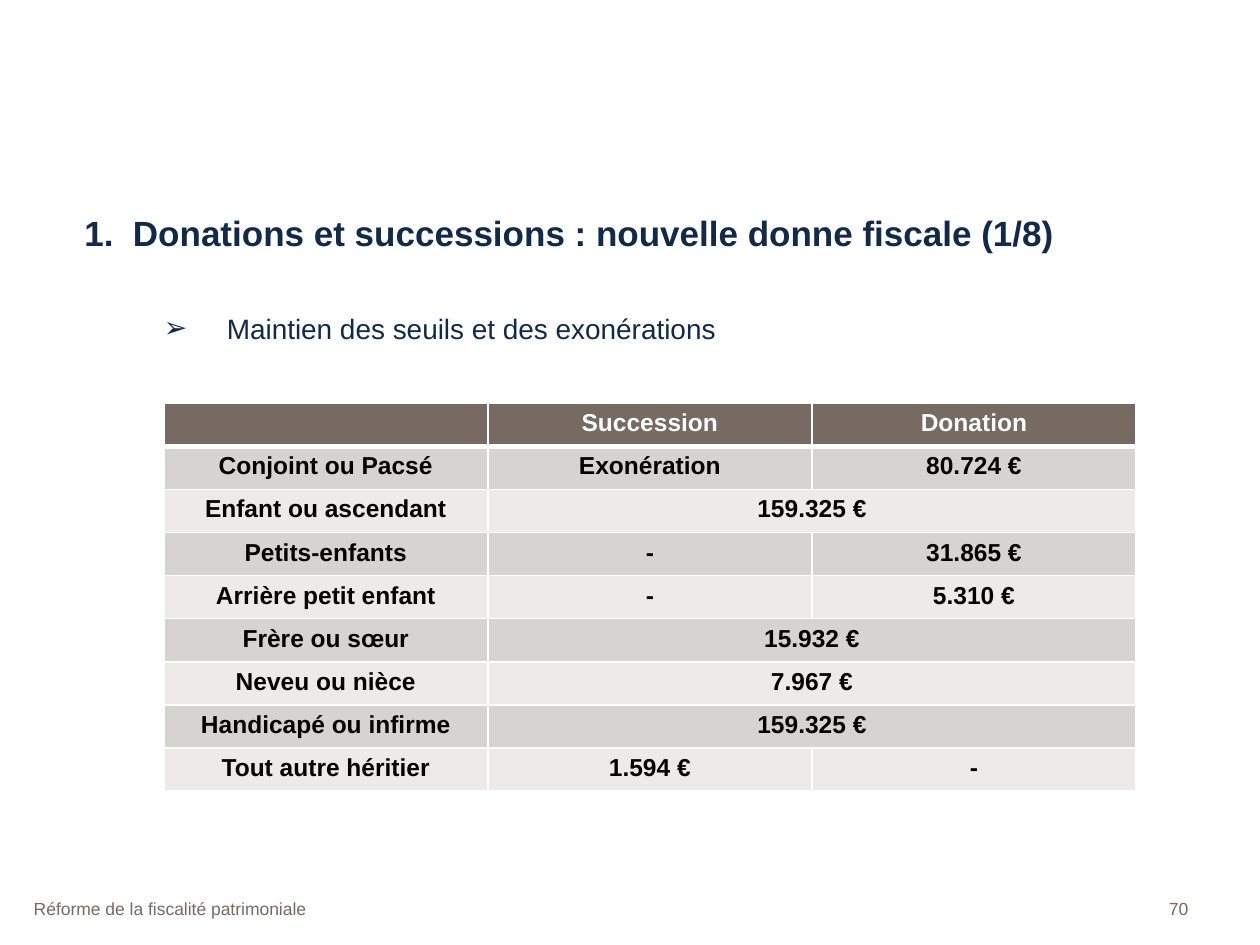
from dataclasses import dataclass
from typing import NamedTuple

from lxml.etree import SubElement
from pptx import Presentation
from pptx.dml.color import RGBColor
from pptx.enum.text import MSO_ANCHOR as Anchor, MSO_AUTO_SIZE as AutoSize, PP_ALIGN as Align
from pptx.oxml import parse_xml
from pptx.oxml.ns import nsdecls, qn
from pptx.util import Pt


@dataclass(frozen=True)
class Theme:
    """Font, colours and type sizes of the slide."""
    font: str = "Arial"
    navy: str = "13294A"
    taupe: str = "766A62"
    white: str = "FFFFFF"
    black: str = "000000"
    bands: tuple[str, str] = ("D6D4D3", "ECEBEA")
    title: int = 20
    body: int = 16
    table: int = 14
    footer: int = 10


class Box(NamedTuple):
    """Place and size in points."""
    left: float
    top: float
    width: float
    height: float


class Row(NamedTuple):
    """Heir and allowances; without a donation value the succession cell spans both."""
    heir: str
    succession: str
    donation: str | None = None


T = Theme()
TITLE = Box(41, 116, 645, 33.8)
BODY = Box(41, 159, 645, 323.3)
NUMBER = Box(641.5, 509.8, 44.6, 30.2)
FOOTER = Box(12.2, 509.8, 610.6, 30.2)
TABLE = Box(93.6, 230.4, 555.6, 221.76)
ROWS = [
    Row("", "Succession", "Donation"),
    Row("Conjoint ou Pacsé", "Exonération", "80.724 €"),
    Row("Enfant ou ascendant", "159.325 €"),
    Row("Petits-enfants", "-", "31.865 €"),
    Row("Arrière petit enfant", "-", "5.310 €"),
    Row("Frère ou sœur", "15.932 €"),
    Row("Neveu ou nièce", "7.967 €"),
    Row("Handicapé ou infirme", "159.325 €"),
    Row("Tout autre héritier", "1.594 €", "-"),
]


def write(tf, text: str, *, size: int, color: str, bold: bool = False,
          align: Align = Align.LEFT):
    """Write one formatted paragraph and return it."""
    p = tf.paragraphs[0]
    p.alignment = align
    if text:
        r = p.add_run()
        r.text = text
        r.font.name, r.font.size, r.font.bold = T.font, Pt(size), bold
        r.font.color.rgb = RGBColor.from_string(color)
    else:
        SubElement(p._p, qn("a:endParaRPr"), sz=str(size * 100))
    return p


def place(sp, box: Box, anchor: Anchor = Anchor.TOP):
    """Move a text shape to its box and return its text frame."""
    sp.left, sp.top, sp.width, sp.height = map(Pt, box)
    tf = sp.text_frame
    tf.word_wrap, tf.auto_size, tf.vertical_anchor = True, AutoSize.NONE, anchor
    return tf


def add_label(s, box: Box, text: str, align: Align = Align.LEFT) -> None:
    """Add a footer text box."""
    tf = place(s.shapes.add_textbox(*map(Pt, box)), box)
    write(tf, text, size=T.footer, color=T.taupe, align=align)


def add_bullet(p, char: str, margin: float, indent: float) -> None:
    """Give a paragraph a hanging bullet."""
    pPr = p._p.get_or_add_pPr()
    pPr.set("marL", str(Pt(margin)))
    pPr.set("indent", str(Pt(indent)))
    SubElement(pPr, qn("a:buFont"), typeface=T.font)
    SubElement(pPr, qn("a:buChar"), char=char)


def set_borders(cell, bottom: float) -> None:
    """Draw white borders around a cell."""
    tcPr = cell._tc.get_or_add_tcPr()
    for i, (side, width) in enumerate({"L": 1, "R": 1, "T": 1, "B": bottom}.items()):
        tcPr.insert(i, parse_xml(
            f'<a:ln{side} {nsdecls("a")} w="{Pt(width)}"><a:solidFill>'
            f'<a:srgbClr val="{T.white}"/></a:solidFill></a:ln{side}>'))


def add_allowances(s) -> None:
    """Add the table of allowances."""
    table = s.shapes.add_table(len(ROWS), 3, *map(Pt, TABLE)).table
    for col in table.columns:
        col.width = Pt(TABLE.width / 3)
    for i, row in enumerate(ROWS):
        header = i == 0
        table.rows[i].height = Pt(TABLE.height / len(ROWS))
        for j, text in enumerate(row):
            cell = table.cell(i, j)
            write(cell.text_frame, text or "", size=T.table, bold=True,
                  color=T.white if header else T.black, align=Align.CENTER)
            cell.fill.solid()
            cell.fill.fore_color.rgb = RGBColor.from_string(
                T.taupe if header else T.bands[(i - 1) % 2])
            set_borders(cell, bottom=3 if header else 1)
        if row.donation is None:
            table.cell(i, 1).merge(table.cell(i, 2))


def main() -> None:
    """Build and save the slide."""
    prs = Presentation()
    prs.slide_width, prs.slide_height = Pt(720), Pt(540)
    s = prs.slides.add_slide(prs.slide_layouts[1])
    write(place(s.shapes.title, TITLE, Anchor.MIDDLE),
          "1.  Donations et successions : nouvelle donne fiscale (1/8)",
          size=T.title, color=T.navy, bold=True)
    tf = place(s.placeholders[1], BODY)
    tf.margin_top = Pt(22.7)
    p = write(tf, "Maintien des seuils et des exonérations", size=T.body, color=T.navy)
    p.level, p.line_spacing, p.space_before = 1, 0.8, Pt(0)
    add_bullet(p, "➢", margin=81.4, indent=-36)
    add_label(s, NUMBER, "70", Align.RIGHT)
    add_label(s, FOOTER, "Réforme de la fiscalité patrimoniale")
    add_allowances(s)
    prs.save("out.pptx")


if __name__ == "__main__":
    main()
